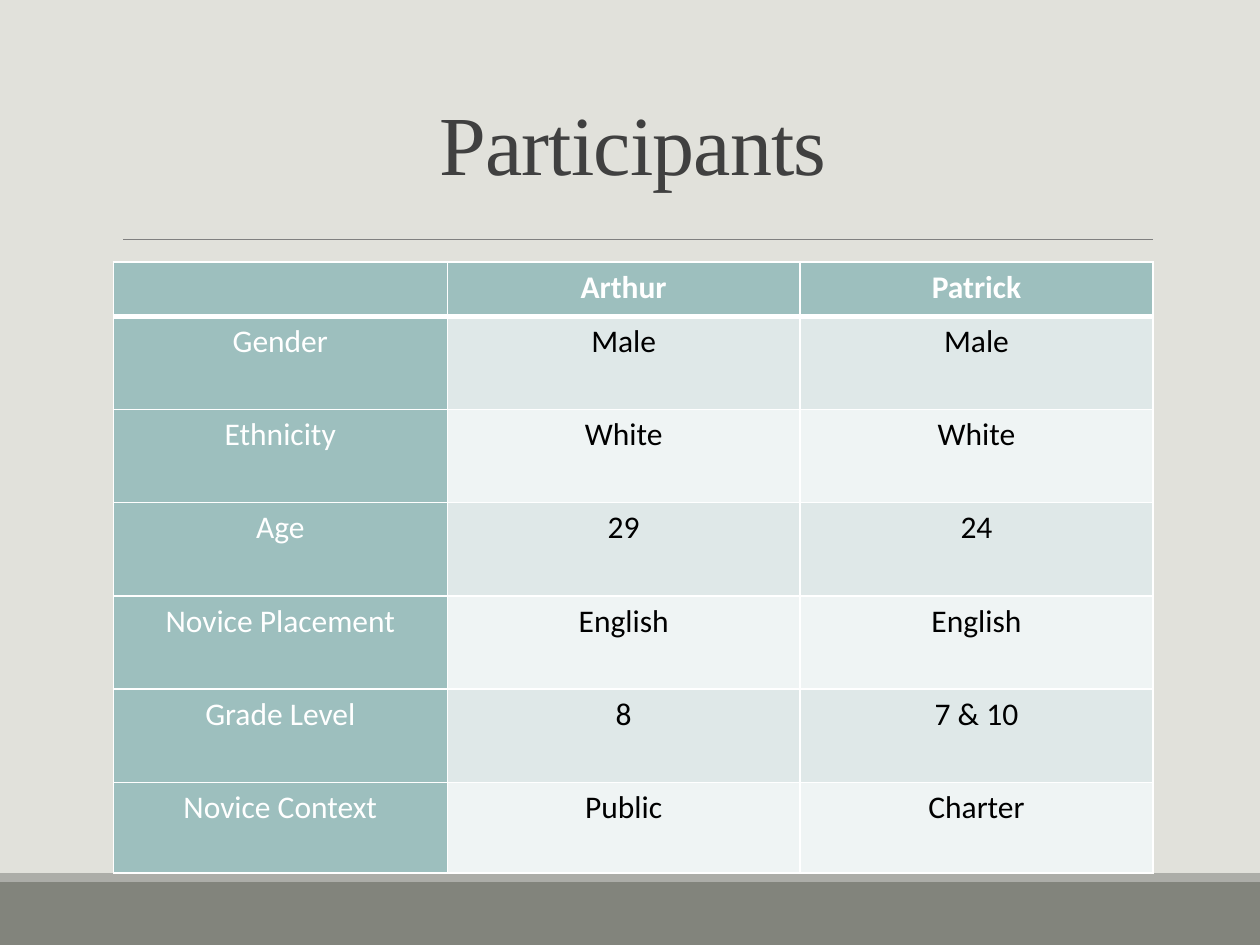
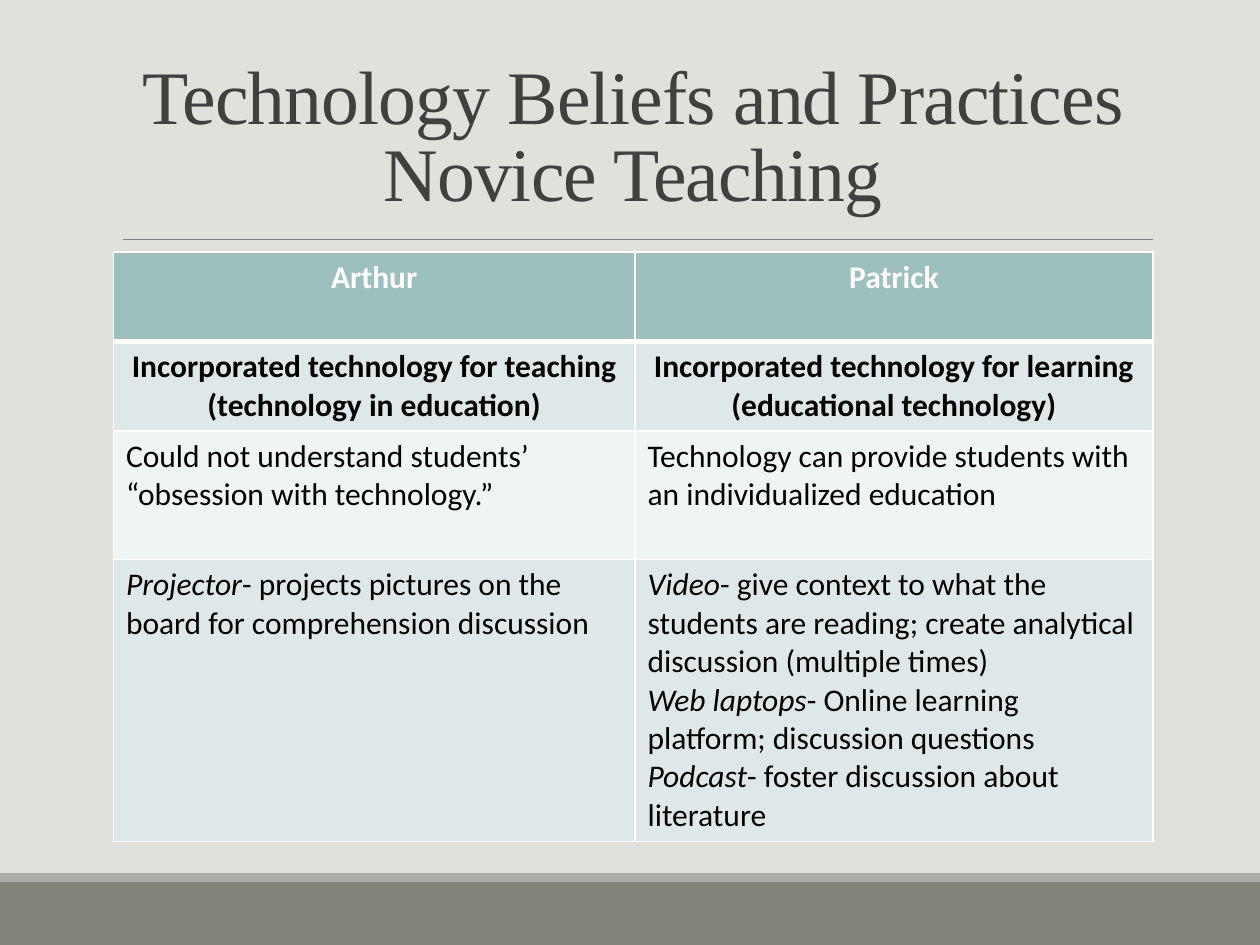
"""Build two table slides comparing the participants Arthur and Patrick."""
from lxml import etree
from pptx import Presentation
from pptx.dml.color import RGBColor
from pptx.enum.shapes import MSO_CONNECTOR, MSO_SHAPE
from pptx.enum.text import MSO_ANCHOR, PP_ALIGN
from pptx.oxml.ns import qn
from pptx.util import Inches, Pt

RECT = MSO_SHAPE.RECTANGLE
STRAIGHT = MSO_CONNECTOR.STRAIGHT
BOTTOM = MSO_ANCHOR.BOTTOM
CENTER, LEFT = PP_ALIGN.CENTER, PP_ALIGN.LEFT

BACKGROUND = RGBColor(0xE1, 0xE1, 0xDB)
BAND = RGBColor(0x82, 0x84, 0x7C)
BAND_EDGE = RGBColor(0xAC, 0xAD, 0xA8)
RULE = RGBColor(0x80, 0x80, 0x80)
TITLE = RGBColor(0x40, 0x40, 0x40)
HEADER = RGBColor(0x9D, 0xBF, 0xBE)
ROW_ODD = RGBColor(0xDF, 0xE8, 0xE8)
ROW_EVEN = RGBColor(0xEF, 0xF4, 0xF4)
WHITE = RGBColor(0xFF, 0xFF, 0xFF)
BLACK = RGBColor(0, 0, 0)

TITLE_FONT, BODY_FONT = "Times New Roman", "Calibri"
MARGIN, CONTENT_WIDTH = Inches(0.9), Inches(8.25)

SLIDES = [
    {
        "title": "Participants", "title_top": 0.31, "title_size": 48,
        "table_top": 2.08, "cols": [2.65, 2.8, 2.8],
        "heights": [0.43] + [0.74] * 5 + [0.72],
        "label_cols": 1, "bold_rows": 1, "centered_rows": 7,
        "rows": [
            ["", "Arthur", "Patrick"],
            ["Gender", "Male", "Male"],
            ["Ethnicity", "White", "White"],
            ["Age", "29", "24"],
            ["Novice Placement", "English", "English"],
            ["Grade Level", "8", "7 & 10"],
            ["Novice Context", "Public", "Charter"],
        ],
    },
    {
        "title": "Technology Beliefs and Practices\vNovice Teaching",
        "title_top": 0.5, "title_size": 43.2,
        "table_top": 2, "cols": [4.14, 4.11],
        "heights": [0.71, 0.71, 1.02, 2.24],
        "label_cols": 0, "bold_rows": 2, "centered_rows": 2,
        "rows": [
            ["Arthur", "Patrick"],
            ["Incorporated technology for teaching\n(technology in education)",
             "Incorporated technology for learning\n(educational technology)"],
            ["Could not understand students’ “obsession with technology.”",
             "Technology can provide students with an individualized education"],
            ["Projector|- projects pictures on the board for comprehension discussion",
             "Video|- give context to what the students are reading; "
             "create analytical discussion (multiple times)\n"
             "Web laptops|- Online learning platform; discussion questions\n"
             "Podcast|- foster discussion about literature"],
        ],
    },
]


def set_borders(cell, top, bottom):
    tc_pr = cell._tc.get_or_add_tcPr()
    for side, width in (("L", 1), ("R", 1), ("T", top), ("B", bottom)):
        ln = etree.SubElement(tc_pr, qn(f"a:ln{side}"), w=str(Pt(width)))
        fill = etree.SubElement(ln, qn("a:solidFill"))
        etree.SubElement(fill, qn("a:srgbClr"), val=str(WHITE))


def format_run(r, font, size, color):
    r.font.name = font
    r.font.size = Pt(size)
    r.font.color.rgb = color


prs = Presentation()
prs.slide_width, prs.slide_height = Inches(10), Inches(7.5)

for content in SLIDES:
    s = prs.slides.add_slide(prs.slide_layouts[6])
    s.background.fill.solid()
    s.background.fill.fore_color.rgb = BACKGROUND

    for top, height, color in ((7, 0.5, BAND), (6.93, 0.07, BAND_EDGE)):
        sp = s.shapes.add_shape(RECT, 0, Inches(top), prs.slide_width, Inches(height))
        sp.shadow.inherit = False
        sp.fill.solid()
        sp.fill.fore_color.rgb = color
        sp.line.fill.background()

    rule = s.shapes.add_connector(
        STRAIGHT, Inches(0.98), Inches(1.9), Inches(9.15), Inches(1.9))
    rule.line.color.rgb = RULE
    rule.line.width = Pt(0.5)
    etree.SubElement(rule._element.spPr, qn("a:effectLst"))

    title = s.shapes.add_textbox(
        MARGIN, Inches(content["title_top"]), CONTENT_WIDTH, Inches(1.27))
    tf = title.text_frame
    tf.word_wrap = True
    tf.vertical_anchor = BOTTOM
    p = tf.paragraphs[0]
    p.text = content["title"]
    p.alignment = CENTER
    p.line_spacing = 0.85
    for r in p.runs:
        format_run(r, TITLE_FONT, content["title_size"], TITLE)
        r.font._element.set("spc", "-50")

    rows, heights = content["rows"], content["heights"]
    table = s.shapes.add_table(
        len(rows), len(content["cols"]), MARGIN, Inches(content["table_top"]),
        CONTENT_WIDTH, Inches(sum(heights))).table
    for column, width in zip(table.columns, content["cols"]):
        column.width = Inches(width)

    for i, texts in enumerate(rows):
        table.rows[i].height = Inches(heights[i])
        for j, text in enumerate(texts):
            cell = table.cell(i, j)
            is_label = i == 0 or j < content["label_cols"]
            set_borders(cell, 3 if i == 1 else 1, 3 if i == 0 else 1)
            cell.fill.solid()
            cell.fill.fore_color.rgb = HEADER if is_label else (ROW_EVEN, ROW_ODD)[i % 2]
            tf = cell.text_frame
            tf.text = text.replace("|", "")
            for p, line in zip(tf.paragraphs, text.split("\n")):
                p.alignment = CENTER if i < content["centered_rows"] else LEFT
                lead, bar, rest = line.rpartition("|")
                if lead:
                    p.text = lead
                    p.runs[0].font.italic = True
                    p.add_run().text = rest
                for r in p.runs:
                    format_run(r, BODY_FONT, 18, WHITE if is_label else BLACK)
                    r.font.bold = i < content["bold_rows"]

prs.save("out.pptx")
